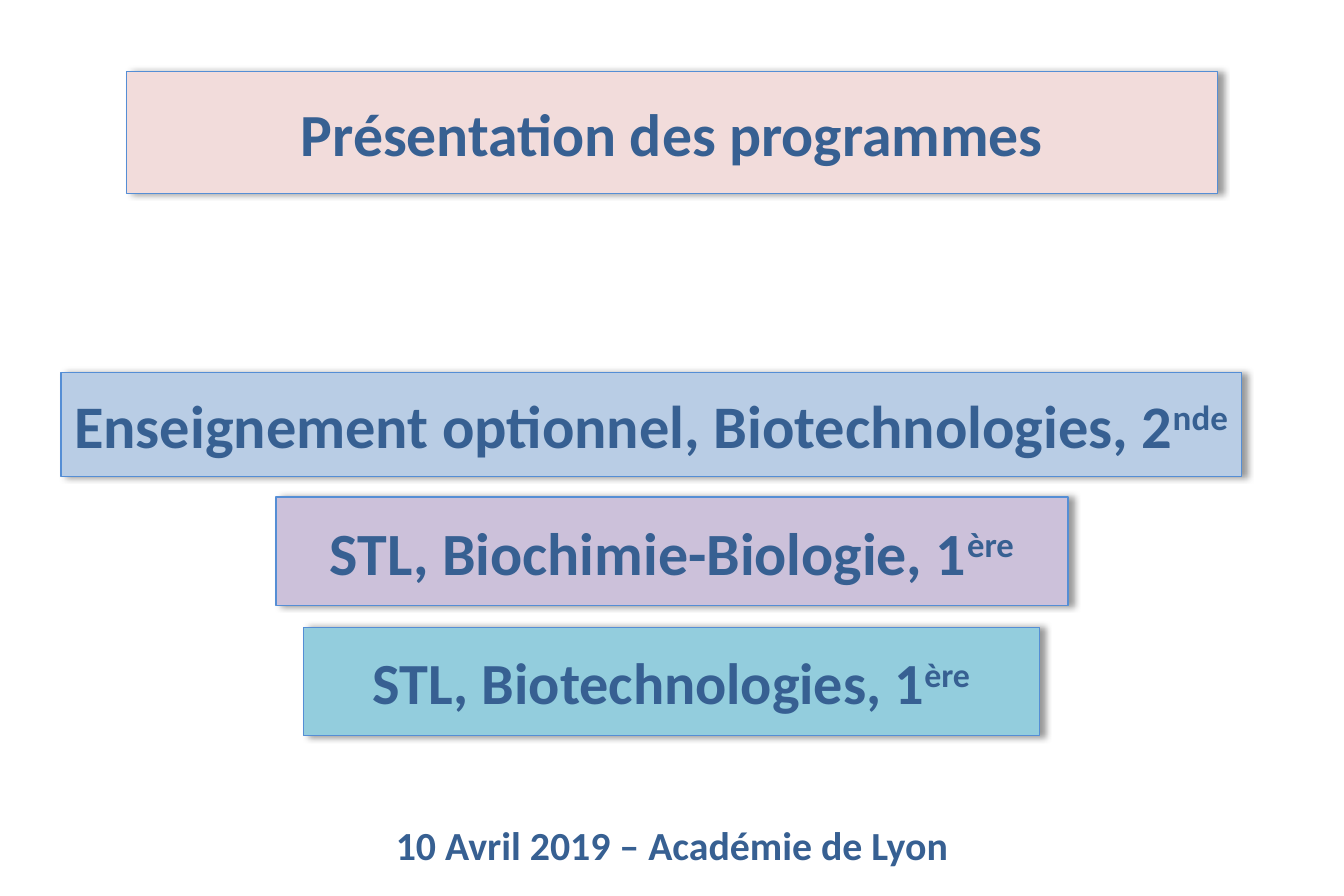
from dataclasses import dataclass

from lxml.etree import SubElement
from pptx import Presentation
from pptx.dml.color import RGBColor
from pptx.enum.shapes import MSO_SHAPE
from pptx.enum.text import MSO_ANCHOR, PP_ALIGN
from pptx.oxml.ns import qn
from pptx.shapes.autoshape import Shape
from pptx.slide import Slide
from pptx.text.text import TextFrame
from pptx.util import Inches, Pt


@dataclass(frozen=True)
class Theme:
    font: str = "Calibri"
    text: str = "376092"
    outline: str = "558ED5"
    shadow: str = "000000"
    rose: str = "F2DCDB"
    blue: str = "B9CDE5"
    violet: str = "CCC1DA"
    teal: str = "93CDDD"
    title_size: float = 36
    second_size: float = 36.4
    biochemistry_size: float = 36.1
    biotech_size: float = 35.1
    date_size: float = 24


@dataclass(frozen=True)
class Banner:
    left: float
    top: float
    width: float
    height: float
    fill: str
    size: float
    label: str
    superscript: str = ""


THEME = Theme()
BANNERS = [
    Banner(1.06, 0.6, 9.13, 1.02, THEME.rose, THEME.title_size,
           "Présentation des programmes"),
    Banner(0.51, 3.12, 9.88, 0.87, THEME.blue, THEME.second_size,
           "Enseignement optionnel, Biotechnologies, 2", "nde"),
    Banner(2.31, 4.16, 6.63, 0.91, THEME.violet, THEME.biochemistry_size,
           "STL, Biochimie-Biologie, 1", "ère"),
    Banner(2.54, 5.25, 6.16, 0.91, THEME.teal, THEME.biotech_size,
           "STL, Biotechnologies, 1", "ère"),
]


def write_label(tf: TextFrame, label: str, size: float, superscript: str = "") -> None:
    tf.word_wrap = True
    p = tf.paragraphs[0]
    p.text = label
    p.alignment = PP_ALIGN.CENTER
    if superscript:
        r = p.add_run()
        r.text = superscript
        r.font._element.set("baseline", "30000")
    for r in p.runs:
        r.font.name = THEME.font
        r.font.size = Pt(size)
        r.font.bold = True
        r.font.color.rgb = RGBColor.from_string(THEME.text)


def add_shadow(sp: Shape) -> None:
    """Cast a soft shadow to the right of the shape."""
    sp.shadow.inherit = False
    effects = sp._element.spPr.find(qn("a:effectLst"))
    shadow = SubElement(effects, qn("a:outerShdw"), blurRad=str(Pt(4)),
                        dist=str(Pt(3)), dir="0", algn="tl", rotWithShape="0")
    color = SubElement(shadow, qn("a:srgbClr"), val=THEME.shadow)
    SubElement(color, qn("a:alpha"), val="40000")


def add_banner(s: Slide, banner: Banner) -> None:
    sp = s.shapes.add_shape(MSO_SHAPE.RECTANGLE, Inches(banner.left), Inches(banner.top),
                            Inches(banner.width), Inches(banner.height))
    sp.fill.solid()
    sp.fill.fore_color.rgb = RGBColor.from_string(banner.fill)
    sp.line.color.rgb = RGBColor.from_string(THEME.outline)
    sp.line.width = Pt(0.75)
    add_shadow(sp)
    tf = sp.text_frame
    tf.vertical_anchor = MSO_ANCHOR.MIDDLE
    tf.margin_left = tf.margin_right = Inches(0.05)
    write_label(tf, banner.label, banner.size, banner.superscript)


def add_date(s: Slide) -> None:
    box = s.shapes.add_textbox(Inches(0.88), Inches(6.82), Inches(9.49), Inches(0.5))
    write_label(box.text_frame, "10 Avril 2019 – Académie de Lyon", THEME.date_size)


def main() -> None:
    prs = Presentation()
    prs.slide_width, prs.slide_height = Inches(11.25), Inches(7.5)
    s = prs.slides.add_slide(prs.slide_layouts[6])
    add_date(s)
    for banner in BANNERS:
        add_banner(s, banner)
    prs.save("out.pptx")


if __name__ == "__main__":
    main()
